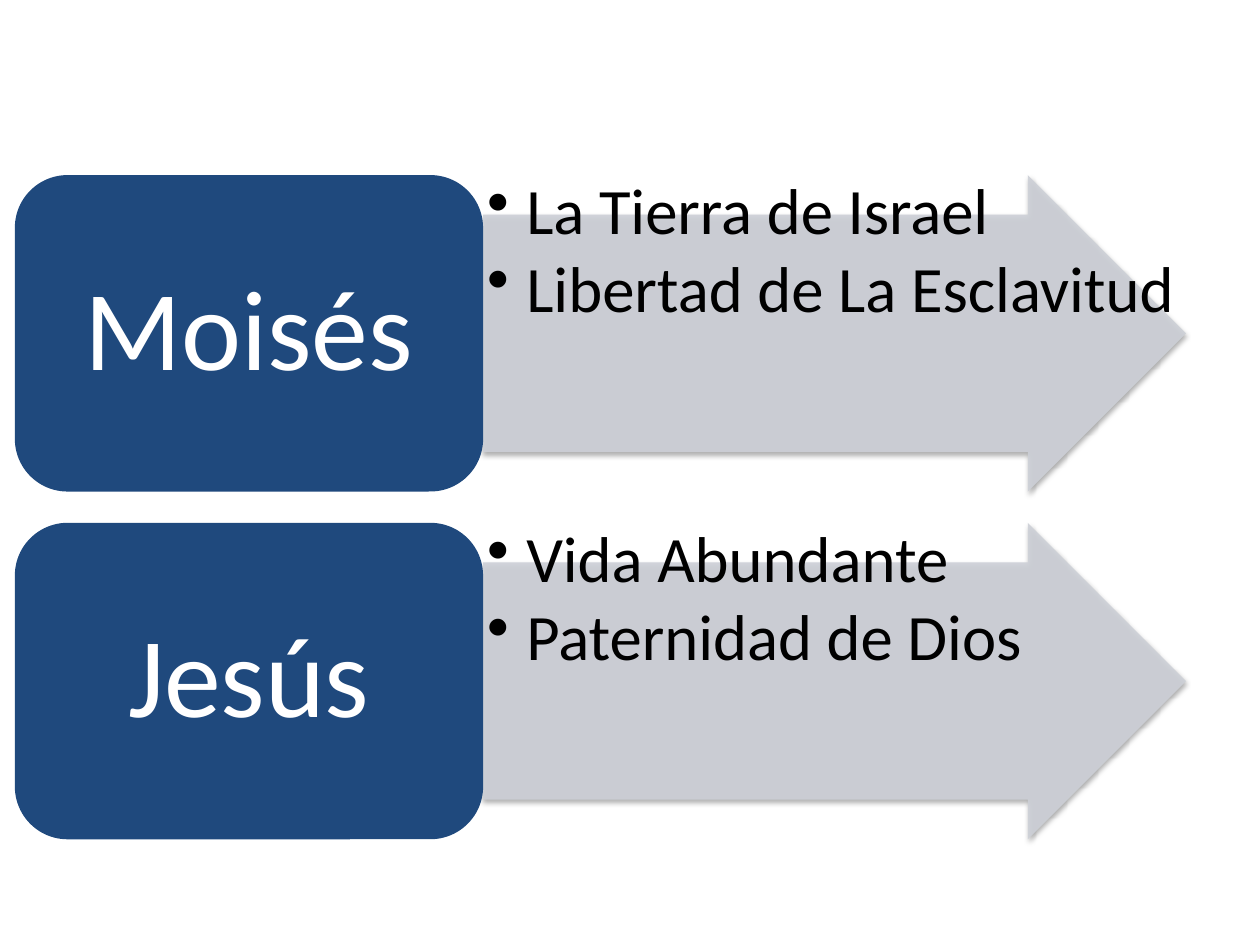
from lxml.etree import SubElement
from pptx import Presentation
from pptx.dml.color import RGBColor
from pptx.enum.shapes import MSO_SHAPE
from pptx.enum.text import MSO_ANCHOR, PP_ALIGN
from pptx.oxml.ns import qn
from pptx.util import Cm, Pt

NAVY = RGBColor(0x1F, 0x49, 0x7D)
PALE_GREY = RGBColor(0xCD, 0xD0, 0xD7)
BLACK = RGBColor(0, 0, 0)
WHITE = RGBColor(0xFF, 0xFF, 0xFF)

CARD_LEFT, CARD_WIDTH = Cm(0.3), Cm(9.44)
ARROW_LEFT, ARROW_WIDTH = CARD_LEFT + CARD_WIDTH, Cm(14.17)
FIRST_TOP, ROW_HEIGHT, ROW_PITCH = Cm(3.53), Cm(6.38), Cm(7.01)
BULLET_INDENT = Cm(0.79)

GIFTS = {
    "Moisés": ["La Tierra de Israel", "Libertad de La Esclavitud"],
    "Jesús": ["Vida Abundante", "Paternidad de Dios"],
}


def set_format(target, values):
    for name, value in values.items():
        setattr(target, name, value)


def add_alpha(color, percent):
    SubElement(color, qn("a:alpha"), val=str(percent * 1000))


def add_filled(slide, preset, bounds, color):
    figure = slide.shapes.add_shape(preset, *bounds)
    figure.shadow.inherit = False
    figure.fill.solid()
    figure.fill.fore_color.rgb = color
    figure.line.fill.background()
    return figure


def write_line(paragraph, wording, size, color):
    paragraph.line_spacing = 0.9
    run = paragraph.add_run()
    run.text = wording
    set_format(run.font, {"name": "Calibri", "size": Pt(size)})
    run.font.color.rgb = color


def add_arrow(slide, bounds):
    arrow = add_filled(slide, MSO_SHAPE.RIGHT_ARROW, bounds, PALE_GREY)
    arrow.adjustments[0] = 0.75
    arrow.adjustments[1] = 0.5
    properties = arrow.element.spPr
    add_alpha(properties.find(f"{qn('a:solidFill')}/{qn('a:srgbClr')}"), 90)
    shadow = SubElement(
        properties.find(qn("a:effectLst")), qn("a:outerShdw"),
        blurRad=str(Pt(3.1)), dist=str(Pt(1.8)), dir="5400000", rotWithShape="0",
    )
    add_alpha(SubElement(shadow, qn("a:srgbClr"), val=str(BLACK)), 35)


def add_gifts(slide, bounds, gifts):
    frame = slide.shapes.add_textbox(*bounds).text_frame
    set_format(frame, {
        "word_wrap": True,
        "margin_left": Cm(0.08), "margin_right": Cm(0.08),
        "margin_top": Cm(0.08), "margin_bottom": Cm(0.08),
    })
    for index, gift in enumerate(gifts):
        paragraph = frame.add_paragraph() if index else frame.paragraphs[0]
        write_line(paragraph, gift, 37, BLACK)
        set_format(paragraph, {"level": 1, "space_after": Pt(4.3)})
        properties = paragraph._p.get_or_add_pPr()
        properties.set("marL", str(BULLET_INDENT))
        properties.set("indent", str(-BULLET_INDENT))
        SubElement(properties, qn("a:buChar"), char="•")


def add_card(slide, bounds, person):
    card = add_filled(slide, MSO_SHAPE.ROUNDED_RECTANGLE, bounds, NAVY)
    set_format(card.text_frame, {
        "word_wrap": True, "vertical_anchor": MSO_ANCHOR.MIDDLE,
        "margin_left": Cm(0.3), "margin_right": Cm(0.3),
        "margin_top": Cm(0), "margin_bottom": Cm(0),
    })
    paragraph = card.text_frame.paragraphs[0]
    paragraph.alignment = PP_ALIGN.CENTER
    write_line(paragraph, person, 65, WHITE)


def main():
    deck = Presentation()
    set_format(deck, {"slide_width": Cm(25.4), "slide_height": Cm(19.05)})
    slide = deck.slides.add_slide(deck.slide_layouts[6])
    for row, (person, gifts) in enumerate(GIFTS.items()):
        top = FIRST_TOP + row * ROW_PITCH
        arrow_bounds = (ARROW_LEFT, top, ARROW_WIDTH, ROW_HEIGHT)
        add_arrow(slide, arrow_bounds)
        add_gifts(slide, arrow_bounds, gifts)
        add_card(slide, (CARD_LEFT, top, CARD_WIDTH, ROW_HEIGHT), person)
    deck.save("out.pptx")


if __name__ == "__main__":
    main()
